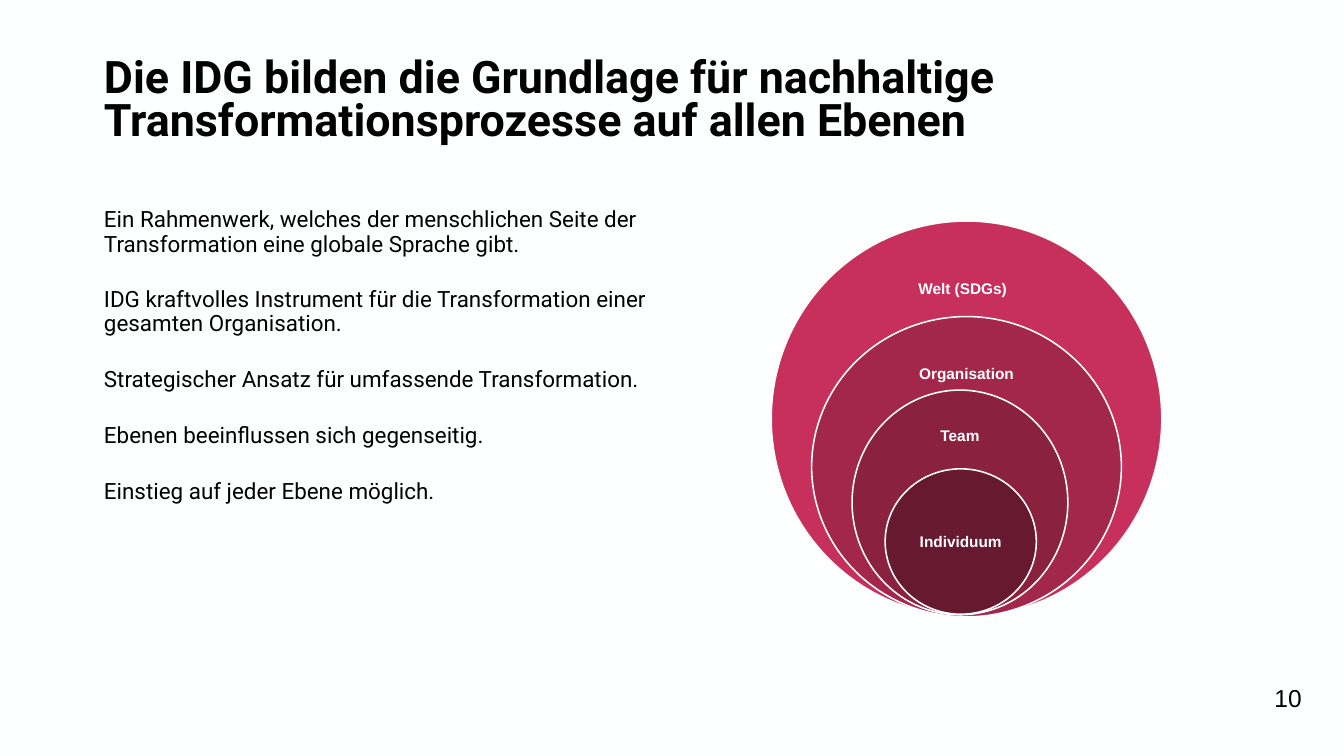
from dataclasses import dataclass

from lxml.etree import SubElement
from pptx import Presentation
from pptx.dml.color import RGBColor
from pptx.enum.shapes import MSO_SHAPE
from pptx.enum.text import MSO_ANCHOR, MSO_AUTO_SIZE, PP_ALIGN
from pptx.oxml.ns import qn
from pptx.util import Emu, Pt

EMU_PER_PX = 9525


@dataclass(frozen=True)
class Theme:
    """Colours, fonts and type sizes of the slide."""
    background: str = "FEFFFF"
    heading: str = "010101"
    body: str = "000000"
    light: str = "FFFFFF"
    world: str = "C72F5C"
    organisation: str = "A2274B"
    team: str = "84203D"
    individual: str = "66192F"
    text_font: str = "Roboto"
    label_font: str = "Arial"
    title_size: int = 64
    body_size: int = 32
    number_size: int = 35
    label_size: int = 22


THEME = Theme()
TITLE = "Die IDG bilden die Grundlage für nachhaltige Transformationsprozesse auf allen Ebenen"
STATEMENTS = [
    "Ein Rahmenwerk, welches der menschlichen Seite der Transformation eine globale Sprache gibt.",
    "IDG kraftvolles Instrument für die Transformation einer gesamten Organisation.",
    "Strategischer Ansatz für umfassende Transformation.",
    "Ebenen beeinflussen sich gegenseitig.",
    "Einstieg auf jeder Ebene möglich.",
]
LEVELS = [
    ("Welt (SDGs)", (1469, 421, 744, 753), THEME.world, 100, MSO_ANCHOR.TOP, (10, 0, 25, 0)),
    ("Organisation", (1546, 603, 590, 572), THEME.organisation, 100, MSO_ANCHOR.TOP, (10, 7, 10, 5)),
    ("Team", (1623, 743, 411, 428), THEME.team, 82, MSO_ANCHOR.TOP, (10, 6, 10, 5)),
    ("Individuum", (1686, 893, 288, 277), THEME.individual, 100, MSO_ANCHOR.MIDDLE, (10, 5, 10, 5)),
]


def px(length):
    """Turn a length in px into EMU."""
    return Emu(length * EMU_PER_PX)


def apply_format(target, values):
    """Set each attribute named in a dict."""
    for name, value in values.items():
        setattr(target, name, value)


def place(shape, bounds):
    """Move and size a shape to bounds given in px."""
    apply_format(shape, dict(zip(("left", "top", "width", "height"), map(px, bounds))))


def prepare_frame(frame, insets, anchor):
    """Set wrapping, anchor and insets of a text frame."""
    sides = ("margin_left", "margin_top", "margin_right", "margin_bottom")
    apply_format(frame, {"word_wrap": True, "auto_size": MSO_AUTO_SIZE.NONE, "vertical_anchor": anchor})
    apply_format(frame, dict(zip(sides, map(px, insets))))


def write_paragraph(paragraph, text, font, size, color, bold=False, **layout):
    """Fill one paragraph with formatted text."""
    paragraph.text = text
    apply_format(paragraph, layout)
    apply_format(paragraph.font, {"name": font, "size": Pt(size), "bold": bold})
    paragraph.font.color.rgb = RGBColor.from_string(color)


def remove_bullet(paragraph):
    """Take the bullet and its hanging indent off a paragraph."""
    properties = paragraph._p.get_or_add_pPr()
    properties.set("marL", "0")
    properties.set("indent", "0")
    SubElement(properties, qn("a:buNone"))


def fill_title(page):
    """Place and write the title."""
    title = page.shapes.title
    place(title, (192, 99, 2076, 192))
    prepare_frame(title.text_frame, (6, 6, 6, 6), MSO_ANCHOR.MIDDLE)
    write_paragraph(title.text_frame.paragraphs[0], TITLE, THEME.text_font, THEME.title_size,
                    THEME.heading, True, alignment=PP_ALIGN.LEFT, line_spacing=0.8)


def fill_body(page):
    """Place the body and write its statements."""
    body = page.placeholders[1]
    place(body, (192, 391, 1139, 641))
    frame = body.text_frame
    prepare_frame(frame, (6, 6, 6, 6), MSO_ANCHOR.TOP)
    for index, statement in enumerate(STATEMENTS):
        paragraph = frame.add_paragraph() if index else frame.paragraphs[0]
        remove_bullet(paragraph)
        write_paragraph(paragraph, statement, THEME.text_font, THEME.body_size, THEME.body,
                        line_spacing=0.9, space_before=Pt(45 if index else 0))


def add_level(page, label, bounds, color, opacity, anchor, insets):
    """Add one labelled circle of the nested levels."""
    circle = page.shapes.add_shape(MSO_SHAPE.OVAL, *map(px, bounds))
    circle.shadow.inherit = False
    circle.fill.solid()
    circle.fill.fore_color.rgb = RGBColor.from_string(color)
    if opacity < 100:
        tone = circle._element.spPr.find(qn("a:solidFill")).find(qn("a:srgbClr"))
        SubElement(tone, qn("a:alpha"), val=str(opacity * 1000))
    circle.line.color.rgb = RGBColor.from_string(THEME.light)
    circle.line.width = Pt(2.25)
    prepare_frame(circle.text_frame, insets, anchor)
    write_paragraph(circle.text_frame.paragraphs[0], label, THEME.label_font, THEME.label_size,
                    THEME.light, True, alignment=PP_ALIGN.CENTER)


def add_page_number(page, number):
    """Add the page number at the lower right."""
    box = page.shapes.add_textbox(*map(px, (2384, 1285, 139, 87)))
    prepare_frame(box.text_frame, (10, 5, 10, 5), MSO_ANCHOR.MIDDLE)
    write_paragraph(box.text_frame.paragraphs[0], number, THEME.label_font, THEME.number_size,
                    THEME.heading, alignment=PP_ALIGN.CENTER)


def main():
    """Build the slide and save the deck."""
    deck = Presentation()
    apply_format(deck, {"slide_width": px(2560), "slide_height": px(1440)})
    page = deck.slides.add_slide(deck.slide_layouts[1])
    page.background.fill.solid()
    page.background.fill.fore_color.rgb = RGBColor.from_string(THEME.background)
    fill_title(page)
    fill_body(page)
    for level in LEVELS:
        add_level(page, *level)
    add_page_number(page, "10")
    deck.save("out.pptx")


if __name__ == "__main__":
    main()
